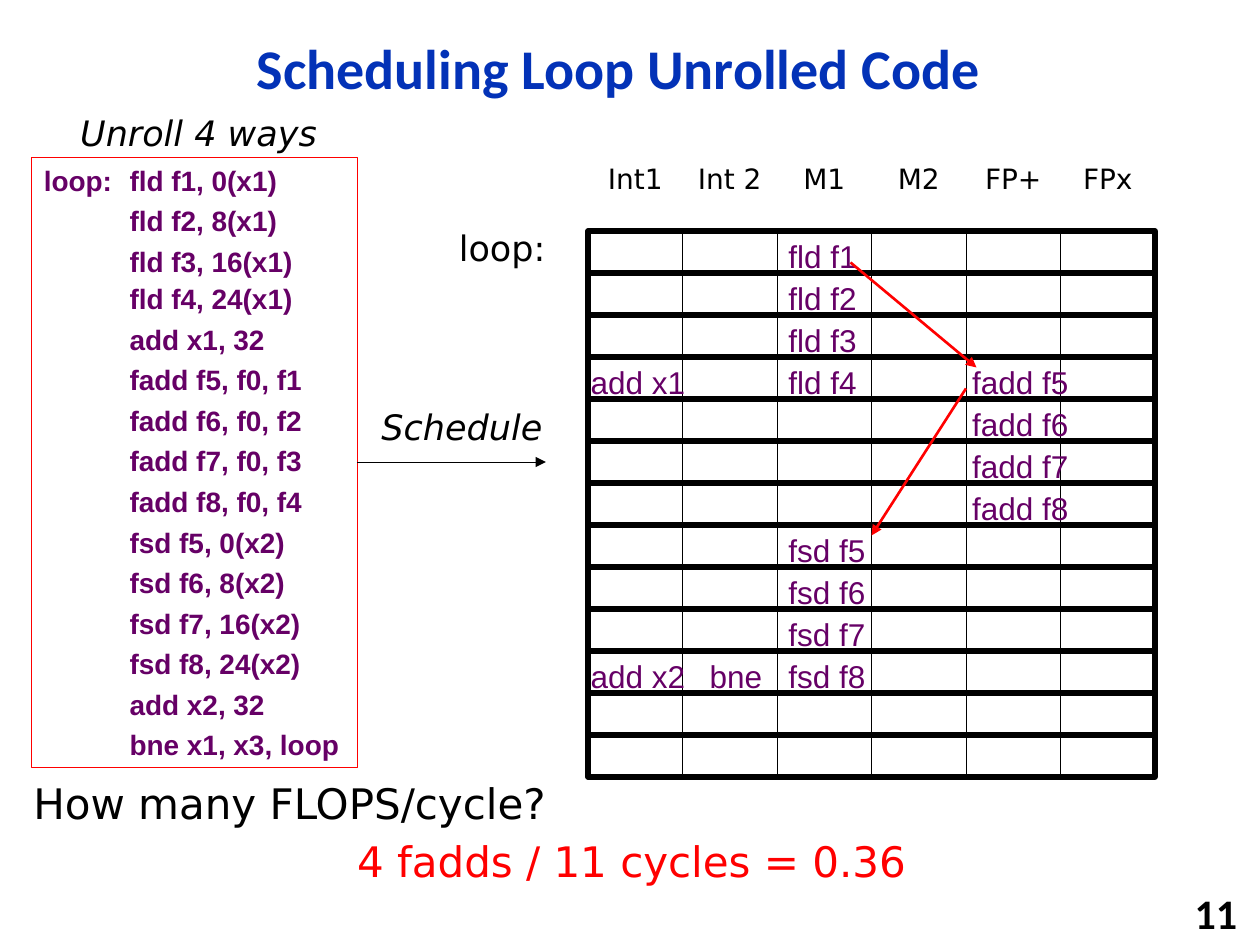
from dataclasses import dataclass
from itertools import product

from lxml.etree import SubElement
from pptx import Presentation
from pptx.dml.color import RGBColor
from pptx.enum.shapes import MSO_CONNECTOR as Connector, MSO_SHAPE as Preset
from pptx.enum.text import MSO_ANCHOR as Anchor, PP_ALIGN as Align
from pptx.oxml.ns import qn
from pptx.util import Pt

BLACK, RED, PURPLE, BLUE = "000000", "FF0000", "660066", "0332B7"
SANS = "DejaVu Sans"
GRID_LEFT, GRID_TOP = 336, 132
CELL_WIDTH, CELL_HEIGHT = 54, 24
CYCLES = 13
UNITS = ["Int1", "Int 2", "M1", "M2", "FP+", "FPx"]
CODE_INDENT = 49
TIGHT_LINE = "fld f4, 24(x1)"
CODE = [
    "loop:\tfld f1, 0(x1)", "fld f2, 8(x1)", "fld f3, 16(x1)", TIGHT_LINE,
    "add x1, 32",
    "fadd f5, f0, f1", "fadd f6, f0, f2", "fadd f7, f0, f3", "fadd f8, f0, f4",
    "fsd f5, 0(x2)", "fsd f6, 8(x2)", "fsd f7, 16(x2)", "fsd f8, 24(x2)",
    "add x2, 32", "bne x1, x3, loop",
]


@dataclass(frozen=True)
class Label:
    text: str
    left: float
    top: float
    width: float
    height: float
    size: float
    font: str = SANS
    color: str = BLACK
    bold: bool = False
    italic: bool = False
    align: Align = Align.CENTER
    anchor: Anchor = Anchor.MIDDLE
    wrap: bool = False
    spacing: float = 1.0


@dataclass(frozen=True)
class IssueRun:
    left: float
    width: float
    first_cycle: int
    operations: tuple[str, ...]


@dataclass(frozen=True)
class Arrow:
    start: tuple[float, float]
    end: tuple[float, float]
    color: str
    weight: float


LABELS = [
    Label("Scheduling Loop Unrolled Code", 66, 12, 575, 58, 32, "Calibri", BLUE,
          bold=True, wrap=True, spacing=0.9),
    Label("11", 564, 510, 150, 23, 24, "Calibri", bold=True, align=Align.RIGHT),
    Label("Unroll 4 ways", 38, 60, 151, 31, 20, italic=True),
    Label("Schedule", 210, 228, 108, 31, 20, italic=True, wrap=True),
    Label("loop:", 254, 126, 66, 31, 20),
    Label("How many FLOPS/cycle?", 12, 444, 582, 33, 24, align=Align.LEFT,
          wrap=True, spacing=0.9),
    Label("4 fadds / 11 cycles = 0.36", 194, 474, 334, 36, 24, color=RED,
          anchor=Anchor.TOP),
]
ISSUES = [
    IssueRun(443, 54, 0, ("fld f1", "fld f2", "fld f3", "fld f4")),
    IssueRun(330, 69, 3, ("add x1",)),
    IssueRun(548, 70, 3, ("fadd f5", "fadd f6", "fadd f7", "fadd f8")),
    IssueRun(443, 59, 7, ("fsd f5", "fsd f6", "fsd f7", "fsd f8")),
    IssueRun(330, 69, 10, ("add x2",)),
    IssueRun(398, 45, 10, ("bne",)),
]
ARROWS = [
    Arrow((204, 264), (312, 264), BLACK, 0.25),
    Arrow((486, 150), (558, 210), RED, 1.5),
    Arrow((552, 222), (498, 306), RED, 1.5),
]


def rgb(color: str) -> RGBColor:
    return RGBColor.from_string(color)


def set_font(paragraph, face: str, size: float, color: str,
             bold: bool = False, italic: bool = False) -> None:
    font = paragraph.font
    font.name, font.size = face, Pt(size)
    font.bold, font.italic = bold, italic
    font.color.rgb = rgb(color)


def draw_label(shapes, label: Label) -> None:
    box = shapes.add_textbox(Pt(label.left), Pt(label.top), Pt(label.width), Pt(label.height))
    frame = box.text_frame
    frame.word_wrap = label.wrap
    frame.vertical_anchor = label.anchor
    paragraph = frame.paragraphs[0]
    paragraph.text = label.text
    paragraph.alignment = label.align
    paragraph.line_spacing = label.spacing
    set_font(paragraph, label.font, label.size, label.color, label.bold, label.italic)


def draw_outline(shapes, left: float, top: float, width: float, height: float,
                 color: str, weight: float):
    outline = shapes.add_shape(Preset.RECTANGLE, Pt(left), Pt(top), Pt(width), Pt(height))
    outline.shadow.inherit = False
    outline.fill.background()
    outline.line.color.rgb = rgb(color)
    outline.line.width = Pt(weight)
    return outline


def draw_code(shapes) -> None:
    frame = draw_outline(shapes, 18, 90, 186, 348.5, RED, 0.25).text_frame
    frame.word_wrap = True
    frame.vertical_anchor = Anchor.MIDDLE
    for index, line in enumerate(CODE):
        paragraph = frame.add_paragraph() if index else frame.paragraphs[0]
        paragraph.text = line
        paragraph.alignment = Align.LEFT
        paragraph.space_before = Pt(4)
        if line == TIGHT_LINE:
            paragraph.line_spacing = 0.9
        set_font(paragraph, "Arial", 16, PURPLE, bold=True)
        properties = paragraph._p.get_or_add_pPr()
        properties.set("marL", str(Pt(CODE_INDENT)))
        properties.set("indent", str(-Pt(CODE_INDENT) if "\t" in line else 0))


def draw_grid(shapes) -> None:
    rows = [shapes.add_group_shape().shapes for _ in range(CYCLES)]
    for cycle, column in product(range(CYCLES), range(len(UNITS))):
        draw_outline(rows[cycle], GRID_LEFT + column * CELL_WIDTH,
                     GRID_TOP + cycle * CELL_HEIGHT, CELL_WIDTH, CELL_HEIGHT, BLACK, 0.25)
    for cycle, row in enumerate(rows):
        draw_outline(row, GRID_LEFT, GRID_TOP + cycle * CELL_HEIGHT,
                     len(UNITS) * CELL_WIDTH, CELL_HEIGHT, BLACK, 3)
    for column, unit in enumerate(UNITS):
        draw_label(shapes, Label(unit, GRID_LEFT + column * CELL_WIDTH, 90,
                                 CELL_WIDTH, CELL_HEIGHT, 16))


def draw_issues(shapes, run: IssueRun) -> None:
    for cycle, operation in enumerate(run.operations, run.first_cycle):
        draw_label(shapes, Label(operation, run.left, GRID_TOP + cycle * CELL_HEIGHT,
                                 run.width, 29, 18, "Arial", PURPLE, anchor=Anchor.TOP))


def draw_arrow(shapes, arrow: Arrow) -> None:
    ends = (Pt(value) for value in arrow.start + arrow.end)
    connector = shapes.add_connector(Connector.STRAIGHT, *ends)
    connector.line.color.rgb = rgb(arrow.color)
    connector.line.width = Pt(arrow.weight)
    SubElement(connector.line._get_or_add_ln(), qn("a:tailEnd"), type="triangle")
    SubElement(connector._element.spPr, qn("a:effectLst"))


def main() -> None:
    deck = Presentation()
    deck.slide_width, deck.slide_height = Pt(720), Pt(540)
    shapes = deck.slides.add_slide(deck.slide_layouts[6]).shapes
    draw_code(shapes)
    draw_grid(shapes)
    for label in LABELS:
        draw_label(shapes, label)
    for run in ISSUES:
        draw_issues(shapes, run)
    for arrow in ARROWS:
        draw_arrow(shapes, arrow)
    deck.save("out.pptx")


if __name__ == "__main__":
    main()
